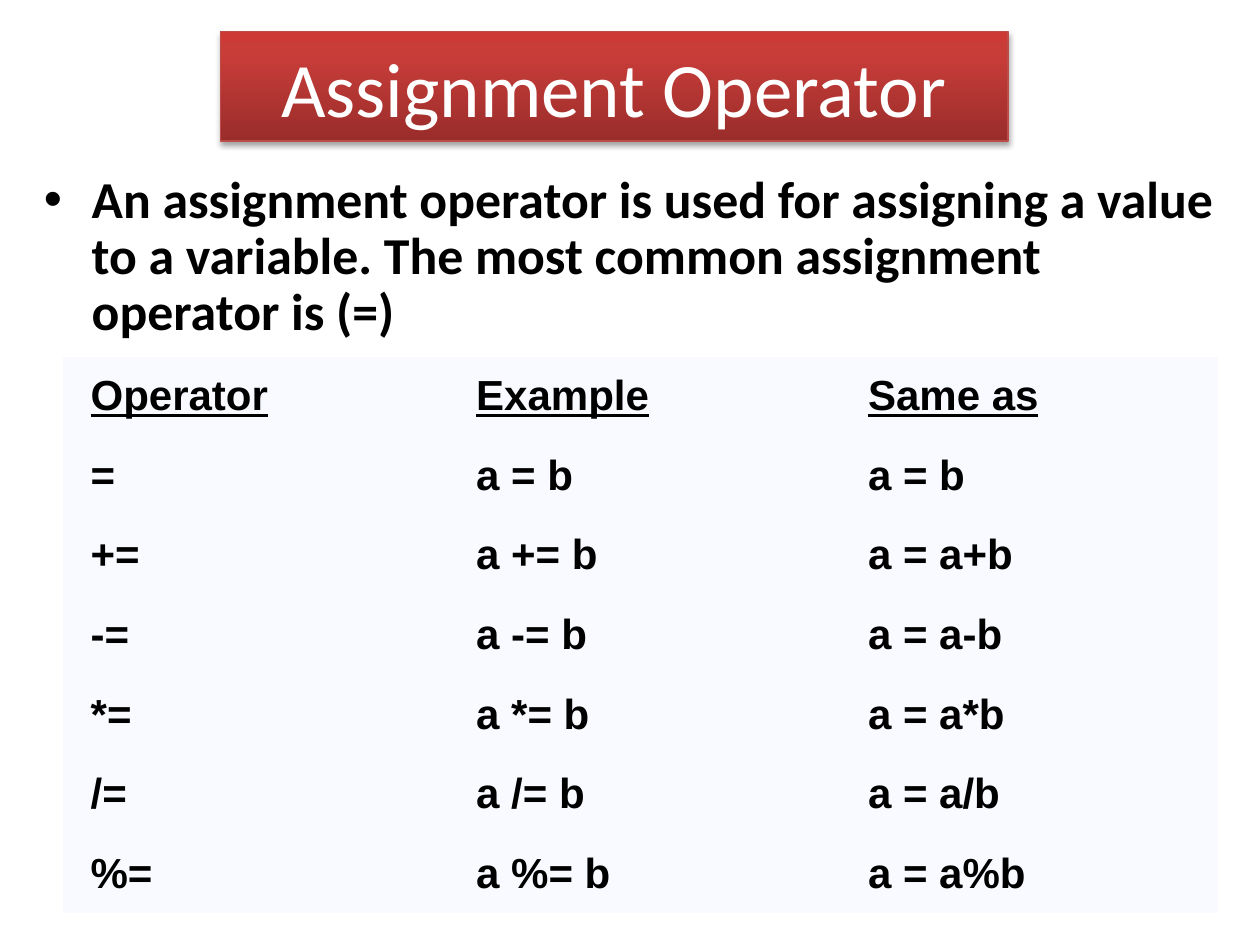
from dataclasses import dataclass
from pptx import Presentation
from pptx.dml.color import RGBColor
from pptx.enum.text import MSO_ANCHOR, MSO_AUTO_SIZE, PP_ALIGN
from pptx.oxml import parse_xml
from pptx.util import Inches, Pt


@dataclass(frozen=True)
class Theme:
    white: str = "FFFFFF"
    black: str = "000000"
    edge: str = "BD4B48"
    cell: str = "F8FAFF"
    stops: tuple = ((0, "992D2B"), (80, "C93D39"), (100, "CD3A36"))
    head: float = 44
    body: float = 29.6
    grid: float = 24
    sans: str = "Calibri"
    mono: str = "Arial"


theme = Theme()
NS = 'xmlns:a="http://schemas.openxmlformats.org/drawingml/2006/main"'


def add_run(para, text, size, face, color, bold=False, under=False):
    run = para.add_run()
    run.text = text
    font = run.font
    font.size = Pt(size)
    font.name = face
    font.color.rgb = RGBColor.from_string(color)
    font.bold = bold
    font.underline = under


def set_pad(item, side, edge):
    item.margin_left = item.margin_right = Inches(side)
    item.margin_top = item.margin_bottom = Inches(edge)


deck = Presentation()
deck.slide_width = Inches(10)
deck.slide_height = Inches(7.5)
slide = deck.slides.add_slide(deck.slide_layouts[5])

title = slide.shapes.title
title.left, title.top = Inches(1.75), Inches(0.25)
title.width, title.height = Inches(6.25), Inches(0.87)
stops = "".join(
    f'<a:gs pos="{pos * 1000}"><a:srgbClr val="{color}"/></a:gs>'
    for pos, color in theme.stops
)
props = title.element.spPr
props.append(parse_xml(
    f'<a:gradFill {NS} rotWithShape="1"><a:gsLst>{stops}</a:gsLst>'
    '<a:lin ang="16200000" scaled="0"/></a:gradFill>'
))
title.line.color.rgb = RGBColor.from_string(theme.edge)
title.line.width = Pt(0.75)
props.append(parse_xml(
    f'<a:effectLst {NS}><a:outerShdw blurRad="{Pt(3.1)}" dist="{Pt(1.8)}" '
    f'dir="5400000" rotWithShape="0"><a:srgbClr val="{theme.black}">'
    '<a:alpha val="35000"/></a:srgbClr></a:outerShdw></a:effectLst>'
))
frame = title.text_frame
frame.auto_size = MSO_AUTO_SIZE.NONE
frame.vertical_anchor = MSO_ANCHOR.MIDDLE
set_pad(frame, 0.1, 0.05)
para = frame.paragraphs[0]
para.alignment = PP_ALIGN.CENTER
add_run(para, "Assignment Operator", theme.head, theme.sans, theme.white)

intro = slide.shapes.add_textbox(Inches(0.25), Inches(1.33), Inches(9.5), Inches(1.5))
frame = intro.text_frame
frame.word_wrap = True
set_pad(frame, 0.1, 0.05)
para = frame.paragraphs[0]
para.line_spacing = 0.9
marks = para._p.get_or_add_pPr()
marks.set("marL", str(Inches(0.38)))
marks.set("indent", str(-Inches(0.38)))
marks.append(parse_xml(f'<a:buClr {NS}><a:srgbClr val="{theme.black}"/></a:buClr>'))
marks.append(parse_xml(f'<a:buFont {NS} typeface="{theme.mono}"/>'))
marks.append(parse_xml(f'<a:buChar {NS} char="•"/>'))
add_run(
    para,
    "An assignment operator is used for assigning a value to a variable. "
    "The most common assignment operator is (=)",
    theme.body, theme.sans, theme.black, bold=True,
)

rows = [("Operator", "Example", "Same as"), ("=", "a = b", "a = b")]
rows += [(f"{sign}=", f"a {sign}= b", f"a = a{sign}b") for sign in "+-*/%"]
widths = (3.06, 3.11, 3)
high = 4.42 / len(rows)
table = slide.shapes.add_table(
    len(rows), len(widths), Inches(0.5), Inches(2.83), Inches(sum(widths)), Inches(4.42)
).table
table.first_row = table.horz_banding = False
for col, width in zip(table.columns, widths):
    col.width = Inches(width)
for y, row in enumerate(rows):
    table.rows[y].height = Inches(high)
    for x, text in enumerate(row):
        cell = table.cell(y, x)
        cell.fill.solid()
        cell.fill.fore_color.rgb = RGBColor.from_string(theme.cell)
        cell.vertical_anchor = MSO_ANCHOR.MIDDLE
        set_pad(cell, 0.22, 0.11)
        add_run(
            cell.text_frame.paragraphs[0], text, theme.grid, theme.mono,
            theme.black, bold=True, under=y == 0,
        )
style = table._tbl.tblPr.find("{*}tableStyleId")
style.text = "{2D5ABB26-0587-4C30-8999-92F81FD0307C}"

deck.save("out.pptx")
